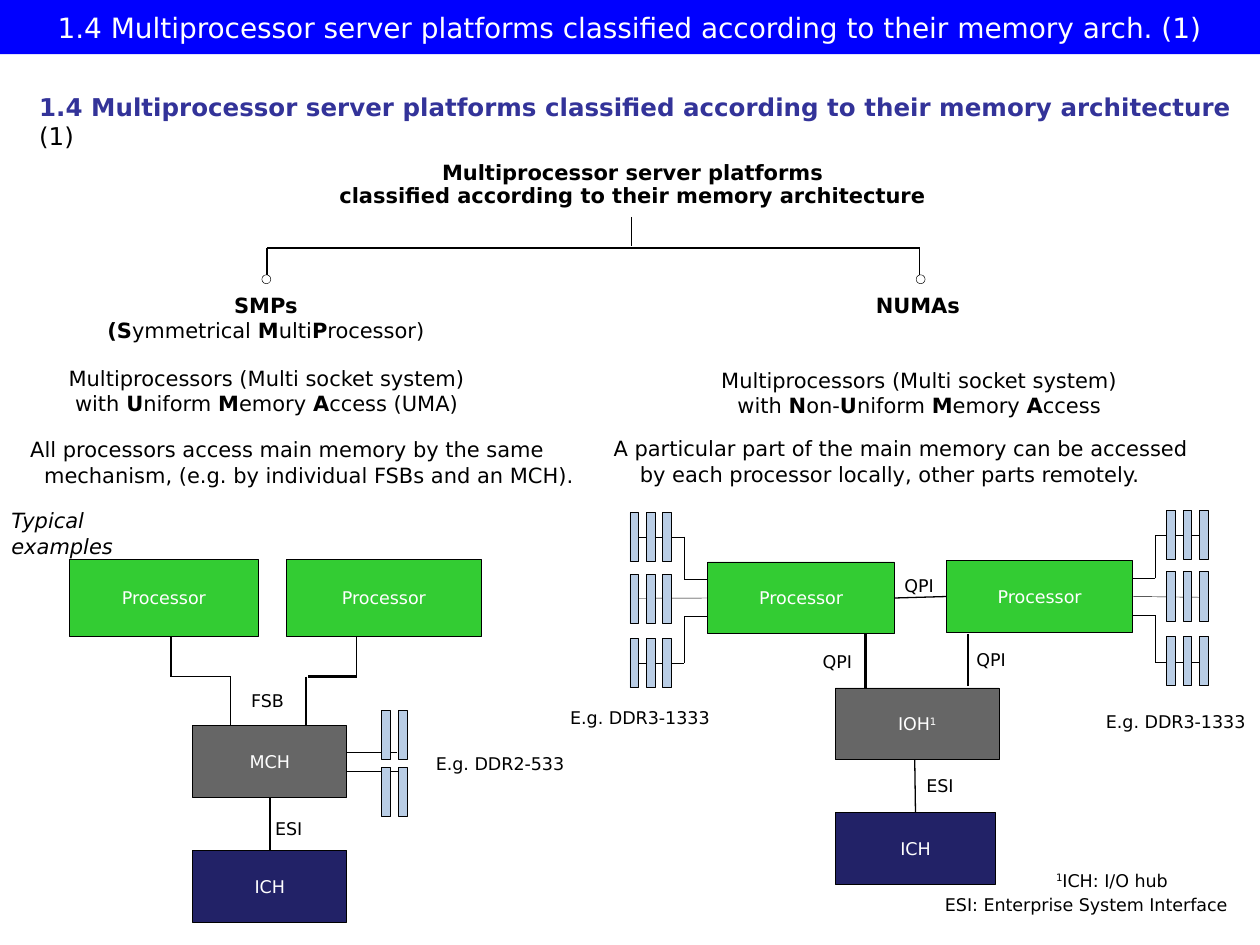
from itertools import product
from pptx import Presentation, util as u
from pptx.dml.color import RGBColor
from pptx.enum import shapes as sh, text as tx
from lxml import etree

INCH = 2.54
FONT = "DejaVu Sans"
A = "http://schemas.openxmlformats.org/drawingml/2006/main"
HUES = {"black": "000000", "white": "FFFFFF", "bar": "0000FF", "head": "333399",
        "green": "33CC33", "gray": "666666", "navy": "222267", "stick": "B9CDE5"}

TITLE = "1.4 Multiprocessor server platforms classified according to their memory arch. (1)"
HEAD = "*1.4 Multiprocessor server platforms classified according to their memory architecture *(1)"

MID = {"align": "center", "size": 12}
LEFT = {"size": 12, "pad": 0}
NOTES = [
    (["*Multiprocessor server platforms*", "*classified according to their memory architecture*"],
     (2.01, 1.24, 6.02, 0.46), dict(MID, gaps=(0.9, 0.9))),
    (["*SMPs*", "*(S*ymmetrical *M*ulti*P*rocessor)"],
     (0.65, 2.29, 2.92, 0.48), dict(MID, gaps=(0.9, 1))),
    (["*NUMAs*"], (6.66, 2.29, 1.25, 0.28), dict(MID, gaps=(0.9,))),
    (["Multiprocessors (Multi socket system)", "with *U*niform *M*emory *A*ccess (UMA)"],
     (0.53, 2.9, 3.17, 0.4), dict(MID, pad=0, wrap=False)),
    (["Multiprocessors (Multi socket system)", "with *N*on-*U*niform *M*emory *A*ccess"],
     (5.61, 2.87, 3.37, 0.5), dict(MID, wrap=False)),
    (["All processors access main memory by the same",
      "mechanism, (e.g. by individual FSBs and an MCH)."],
     (0.19, 3.47, 4.46, 0.4), dict(LEFT, leads=(0.05, 0.16))),
    (["A particular part of the main memory can be accessed",
      "by each processor locally, other parts remotely."],
     (4.82, 3.46, 4.85, 0.4), dict(LEFT, leads=(0.05, 0.26))),
    (["Typical examples"], (0.09, 4.03, 1, 0.4), dict(LEFT, italic=True)),
    (["^1^ICH: I/O hub"], (8.38, 6.9, 1.1, 0.17), {"pad": 0}),
    (["ESI: Enterprise System Interface"], (7.5, 7.1, 2.4, 0.17), {"pad": 0}),
]

LABELS = [
    ("FSB", 1.89, 5.43, 0.47), ("ESI", 2.07, 6.44, 0.44), ("E.g. DDR2-533", 3.34, 5.93, 1.26),
    ("E.g. DDR3-1333", 4.41, 5.56, 1.34), ("E.g. DDR3-1333", 8.66, 5.59, 1.34),
    ("QPI", 6.42, 5.12, 0.45), ("QPI", 7.07, 4.51, 0.45), ("QPI", 7.64, 5.1, 0.45),
    ("ESI", 7.24, 6.1, 0.44),
]

BOXES = {
    "smp1": ("Processor", "green", (0.55, 4.44, 1.5, 0.61)),
    "smp2": ("Processor", "green", (2.27, 4.44, 1.55, 0.61)),
    "mch": ("MCH", "gray", (1.53, 5.76, 1.22, 0.57)),
    "ich1": ("ICH", "navy", (1.53, 6.75, 1.22, 0.57)),
    "numa1": ("Processor", "green", (5.62, 4.46, 1.48, 0.57)),
    "numa2": ("Processor", "green", (7.51, 4.45, 1.48, 0.57)),
    "ioh": ("IOH^1^", "gray", (6.63, 5.46, 1.3, 0.57)),
    "ich2": ("ICH", "navy", (6.63, 6.45, 1.27, 0.57)),
}

WIRES = [
    (0.75, [(5.01, 1.72), (5.01, 1.95)]),
    (0.75, [(2.12, 2.2), (2.12, 1.97), (7.3, 1.97), (7.3, 2.2)]),
    (0.75, [(1.36, 5.05), (1.36, 5.37), (1.83, 5.37), (1.83, 5.76)]),
    (0.75, [(2.83, 5.05), (2.83, 5.37)]),
    (1.5, [(2.83, 5.37), (2.44, 5.37)]),
    (0.75, [(2.43, 5.37), (2.43, 5.75)]),
    (0.25, [(2.75, 5.97), (3.15, 5.97)]),
    (0.25, [(2.75, 6.12), (3.22, 6.12)]),
    (1.5, [(6.87, 5.03), (6.87, 5.47)]),
    (1.5, [(7.68, 5.03), (7.68, 5.44)]),
]

BUSES = [("numa1", 1, 5.62, 5.43, 5.07, 4.26), ("numa2", 3, 8.99, 9.17, 9.53, 4.25)]
BANKS = [(3.03, 2, (5.64, 6.09)), (5, 3, (4.07, 4.56, 5.07)), (9.26, 3, (4.05, 4.54, 5.05))]
RINGS = [(2.08, 2.18), (7.27, 2.18)]


def cm(*vals):
    return [u.Cm(round(v * INCH, 2)) for v in vals]


def rgb(hue):
    return RGBColor.from_string(HUES[hue])


def write(frame, lines, size=10, hue="black", align="left", anchor="top", pad=None,
          wrap=True, italic=False, gaps=(), leads=()):
    frame.word_wrap = wrap
    frame.auto_size = tx.MSO_AUTO_SIZE.NONE
    frame.vertical_anchor = getattr(tx.MSO_ANCHOR, anchor.upper())
    if pad is not None:
        frame.margin_left = frame.margin_right = frame.margin_top = frame.margin_bottom = u.Cm(pad)
    for n, line in enumerate(lines):
        para = frame.add_paragraph() if n else frame.paragraphs[0]
        para.alignment = getattr(tx.PP_ALIGN, align.upper())
        if gaps:
            para.line_spacing = gaps[n]
        if leads:
            para._p.get_or_add_pPr().set("marL", str(cm(leads[n])[0]))
        for i, bit in enumerate(line.split("*")):
            for j, part in enumerate(bit.split("^")):
                if part:
                    run = para.add_run()
                    run.text = part
                    font = run.font
                    font.name, font.size = FONT, u.Pt(size)
                    font.bold, font.italic = i % 2 == 1, italic
                    font.color.rgb = rgb(hue)
                    if j % 2:
                        run._r.get_or_add_rPr().set("baseline", "30000")


def note(lines, place, **fmt):
    box = slide.shapes.add_textbox(*cm(*place))
    write(box.text_frame, lines, **fmt)
    return box


def block(place, hue, kind="RECTANGLE", width=0.5):
    item = slide.shapes.add_shape(getattr(sh.MSO_SHAPE, kind), *cm(*place))
    item.shadow.inherit = False
    item.fill.solid()
    item.fill.fore_color.rgb = rgb(hue)
    item.line.color.rgb = rgb("black")
    item.line.width = u.Pt(width)
    return item


def wire(start, end, width, head=None, tail=None):
    line = slide.shapes.add_connector(sh.MSO_CONNECTOR.STRAIGHT, *cm(*start, *end))
    line.line.color.rgb = rgb("black")
    line.line.width = u.Pt(width)
    etree.SubElement(line._element.spPr, f"{{{A}}}effectLst")
    if head:
        line.begin_connect(*head)
    if tail:
        line.end_connect(*tail)


def track(points, width):
    for start, end in zip(points, points[1:]):
        wire(start, end, width)


deck = Presentation()
deck.slide_width, deck.slide_height = cm(10, 7.5)
slide = deck.slides.add_slide(deck.slide_layouts[5])

title = slide.shapes.title
title.left, title.top, title.width, title.height = cm(0, 0, 10, 0.43)
title.fill.solid()
title.fill.fore_color.rgb = rgb("bar")
write(title.text_frame, [TITLE], size=16, hue="white", align="center", anchor="middle")

head = note([HEAD], (0.31, 0.73, 9.72, 0.46), size=14, hue="head", pad=0)
head.text_frame.paragraphs[0].runs[-1].font.color.rgb = rgb("black")

parts = {}
for key, (name, hue, place) in BOXES.items():
    parts[key] = block(place, hue)
    write(parts[key].text_frame, [name], hue="white", align="center", anchor="middle")

for width, points in WIRES:
    track(points, width)
wire((2.14, 6.75), (2.14, 6.33), 0.75, (parts["ich1"], 0), (parts["mch"], 2))
wire((7.26, 6.45), (7.26, 6.03), 0.75, (parts["ich2"], 0))
wire((7.1, 4.75), (7.51, 4.74), 0.75, (parts["numa1"], 3), (parts["numa2"], 1))

for key, side, edge, trunk, far, top in BUSES:
    track([(far, top), (trunk, top), (trunk, top + 0.34), (edge, top + 0.34)], 0.25)
    track([(far, top + 1), (trunk, top + 1), (trunk, top + 0.63), (edge, top + 0.63)], 0.25)
    wire((far, top + 0.49), (edge, top + 0.49), 0.25, tail=(parts[key], side))

for left, count, rows in BANKS:
    for top, col in product(rows, range(count)):
        block((left + col * 0.13, top, 0.07, 0.39), "stick")
for left, top in RINGS:
    block((left, top, 0.07, 0.07), "white", "OVAL", 0.25)

for lines, place, fmt in NOTES:
    note(lines, place, **fmt)
for name, left, top, wide in LABELS:
    note([name], (left, top, wide, 0.27), align="center", wrap=False)

deck.save("out.pptx")
